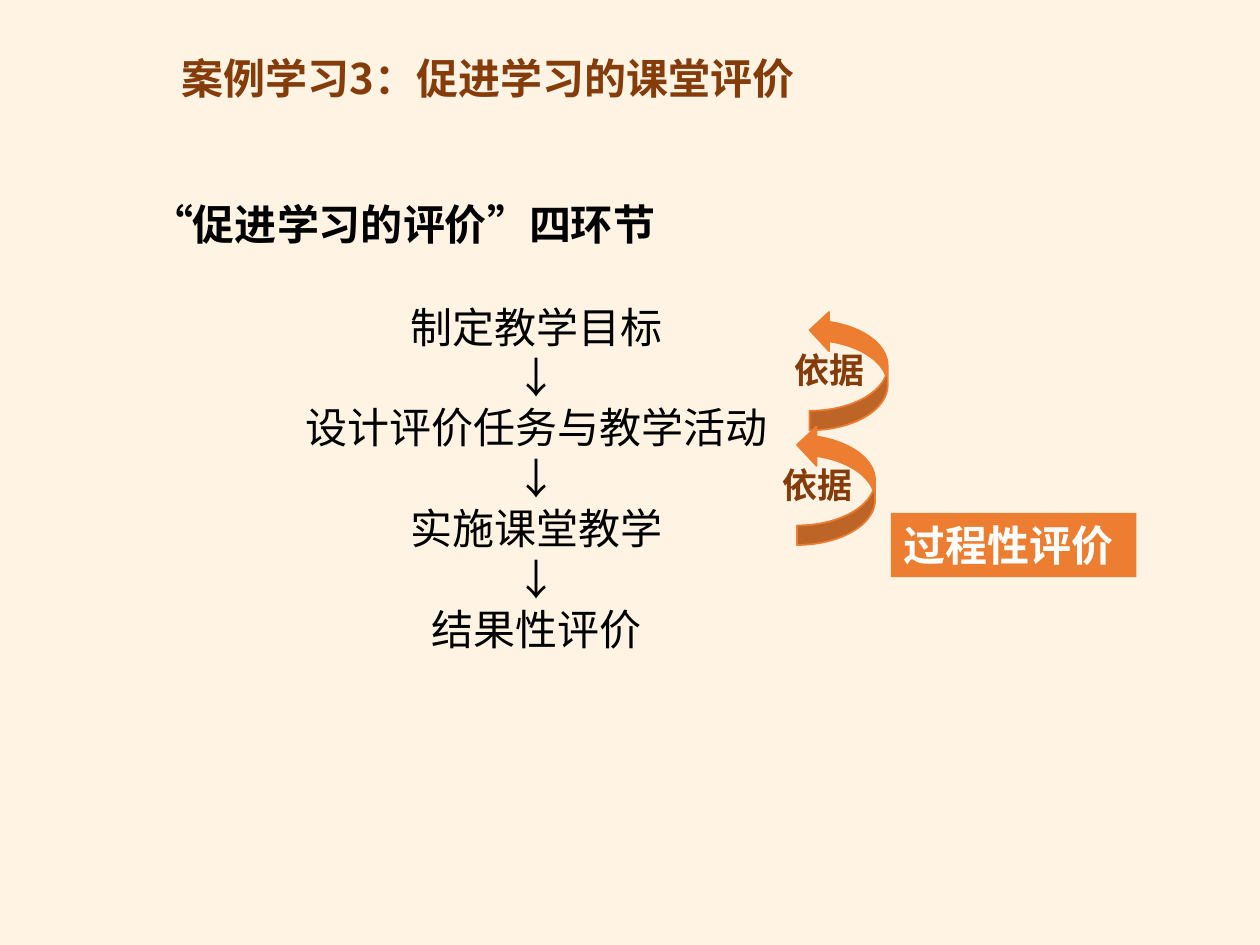
import pptx
import pptx.dml.color
import pptx.enum.shapes
import pptx.enum.text
import pptx.oxml.ns
import pptx.util
from lxml import etree

Inches = pptx.util.Inches
RGBColor = pptx.dml.color.RGBColor
MSO_SHAPE = pptx.enum.shapes.MSO_SHAPE
PP_ALIGN = pptx.enum.text.PP_ALIGN

CREAM = RGBColor(0xFF, 0xF3, 0xE3)
ORANGE = RGBColor(0xED, 0x7D, 0x31)
BROWN = RGBColor(0x84, 0x3C, 0x0B)
BLACK = RGBColor(0, 0, 0)
WHITE = RGBColor(0xFF, 0xFF, 0xFF)


class SlideBuilder:
    font = "Noto Sans CJK SC"
    line_factor = 1.2

    def __init__(self, slide):
        self.s = slide
        fill = slide.background.fill
        fill.solid()
        fill.fore_color.rgb = CREAM

    def set_text(self, sp, lines, color, size=24, bold=True, align=PP_ALIGN.LEFT, wrap=True):
        tf = sp.text_frame
        tf.text = "\n".join(lines)
        tf.word_wrap = wrap
        tf.auto_size = pptx.enum.text.MSO_AUTO_SIZE.SHAPE_TO_FIT_TEXT
        tf.vertical_anchor = pptx.enum.text.MSO_ANCHOR.TOP
        for p in tf.paragraphs:
            p.alignment = align
            p.line_spacing = pptx.util.Pt(size * self.line_factor)
            for r in p.runs:
                r.font.size = pptx.util.Pt(size)
                r.font.bold = bold
                r.font.name = self.font
                r.font.color.rgb = color
                ea = etree.SubElement(r.font._element, pptx.oxml.ns.qn("a:ea"))
                ea.set("typeface", self.font)

    def text(self, box, lines, color, parent=None, **style):
        shapes = (parent or self.s).shapes
        sp = shapes.add_textbox(*map(Inches, box))
        self.set_text(sp, lines, color, **style)

    def shape(self, kind, box, parent=None):
        shapes = (parent or self.s).shapes
        sp = shapes.add_shape(kind, *map(Inches, box))
        sp.shadow.inherit = False
        sp.fill.solid()
        sp.fill.fore_color.rgb = ORANGE
        sp.line.fill.background()
        return sp

    def label(self, box, text):
        sp = self.shape(MSO_SHAPE.RECTANGLE, box)
        self.set_text(sp, [text], WHITE)

    def feedback_arrow(self, left, top, text):
        group = self.s.shapes.add_group_shape()
        sp = self.shape(MSO_SHAPE.CURVED_UP_ARROW, (left, top, 0.95, 0.62), group)
        sp.rotation = 270
        sp.line.color.rgb = ORANGE
        sp.line.width = pptx.util.Pt(1)
        self.text((left - 0.05, top + 0.09, 0.95, 0.44), [text], BROWN, group, size=20)


def main():
    prs = pptx.Presentation()
    prs.slide_width = Inches(10)
    prs.slide_height = Inches(7.5)
    b = SlideBuilder(prs.slides.add_slide(prs.slide_layouts[6]))

    b.text((1.1, 1.53, 6.65, 0.5), ["“促进学习的评价”四环节"], BLACK)
    steps = ["制定教学目标", "设计评价任务与教学活动", "实施课堂教学", "结果性评价"]
    b.text((2.31, 2.34, 3.9, 2.93), "\n↓\n".join(steps).split("\n"), BLACK,
           bold=False, align=PP_ALIGN.CENTER, wrap=False)
    for left, top in ((6.26, 2.63), (6.16, 3.54)):
        b.feedback_arrow(left, top, "依据")
    b.label((7.07, 4.07, 1.95, 0.51), "过程性评价")
    b.text((1.34, 0.37, 7.11, 0.5), ["案例学习3：促进学习的课堂评价"], BROWN)
    prs.save("out.pptx")


if __name__ == "__main__":
    main()
